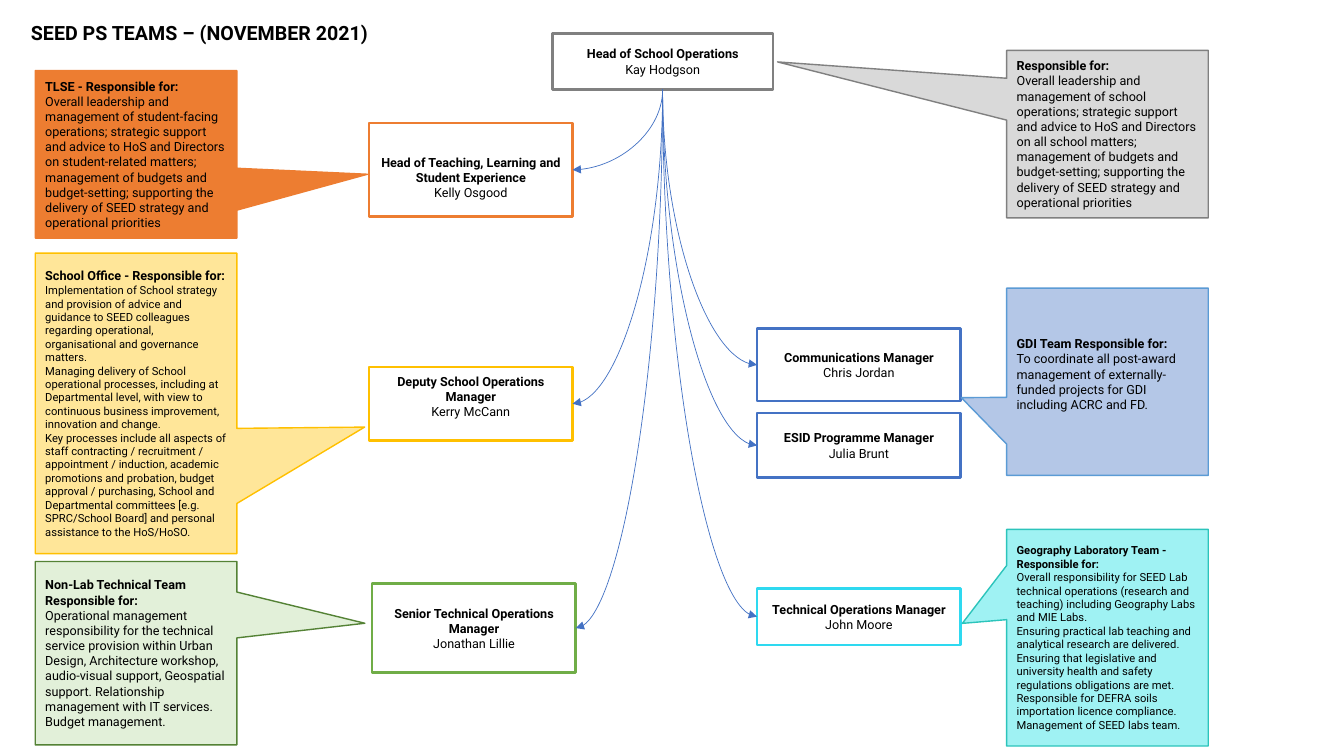
from lxml.etree import SubElement
from pptx import Presentation
from pptx.dml.color import RGBColor
from pptx.enum.shapes import MSO_CONNECTOR, MSO_SHAPE
from pptx.enum.text import MSO_ANCHOR, PP_ALIGN
from pptx.oxml.ns import qn
from pptx.util import Cm, Pt

theme = {
    "font": "Roboto", "title": 14, "body": 9, "small": 8,
    "box": 1.75, "note": 1, "curve": 0.5,
    "black": "000000", "blue": "4472C4", "sky": "5B9BD5", "pale": "B4C7E7",
    "cyan": "2ED9F0", "teal": "2CC4BB", "aqua": "9FF2F3",
    "green": "70AD47", "moss": "548235", "mint": "E2F0D9",
    "gold": "FFC000", "cream": "FFE699", "grey": "808080", "ash": "D9D9D9",
    "orange": "ED7D31",
}


def write(frame, lines, align):
    frame.word_wrap = True
    for i, (text, size, bold) in enumerate(lines):
        para = frame.paragraphs[0] if i == 0 else frame.add_paragraph()
        para.alignment = align
        run = para.add_run()
        run.text = text
        run.font.name = theme["font"]
        run.font.size = Pt(theme[size])
        run.font.bold = bold
        run.font.color.rgb = RGBColor.from_string(theme["black"])


def draw(kind, place, fill, line, width):
    shape = slide.shapes.add_shape(kind, *map(Cm, place))
    shape.shadow.inherit = False
    if fill:
        shape.fill.solid()
        shape.fill.fore_color.rgb = RGBColor.from_string(theme[fill])
    else:
        shape.fill.background()
    shape.line.color.rgb = RGBColor.from_string(theme[line])
    shape.line.width = Pt(theme[width])
    shape.text_frame.vertical_anchor = MSO_ANCHOR.MIDDLE
    return shape


deck = Presentation()
deck.slide_width, deck.slide_height = Cm(33.87), Cm(19.05)
slide = deck.slides.add_slide(deck.slide_layouts[6])

title = slide.shapes.add_textbox(Cm(0.53), Cm(0.41), Cm(10.24), Cm(0.86))
write(title.text_frame, [("SEED PS TEAMS – (NOVEMBER 2021)", "title", True)], PP_ALIGN.LEFT)

left, right, wide = 9.3, 19.08, 5.13
inset, blank = 0.13, 0.51
staff = [
    ("Head of School Operations", "Kay Hodgson", (13.92, 0.84, 5.56, 1.42), "grey", inset, inset),
    ("Head of Teaching, Learning and Student Experience", "Kelly Osgood",
     (left, 3.1, wide, 2.36), "orange", blank, inset),
    ("Deputy School Operations Manager", "Kerry McCann",
     (left, 9.25, wide, 1.85), "gold", inset, blank),
    ("Senior Technical Operations Manager", "Jonathan Lillie",
     (left + 0.08, 14.71, wide, 2.24), "green", inset, inset),
    ("Communications Manager", "Chris Jordan", (right, 8.28, wide, 1.83), "blue", inset, inset),
    ("ESID Programme Manager", "Julia Brunt", (right, 10.41, wide, 1.63), "blue", inset, inset),
    ("Technical Operations Manager", "John Moore",
     (right, 14.83, wide, 1.42), "cyan", inset, inset),
]
boxes = []
for role, name, place, line, top, bottom in staff:
    box = draw(MSO_SHAPE.RECTANGLE, place, None, line, "box")
    box.text_frame.margin_top, box.text_frame.margin_bottom = Cm(top), Cm(bottom)
    write(box.text_frame, [(role, "body", True), (name, "body", False)], PP_ALIGN.CENTER)
    boxes.append(box)

west, east, span = 0.89, 25.37, 5.08
notes = [
    (west, 1.78, 4.22, (1.148, 0.119), "orange", "orange", "body", inset, [
        "TLSE - Responsible for:",
        "Overall leadership and management of student-facing operations; strategic support and "
        "advice to HoS and Directors on student-related matters; management of budgets and "
        "budget-setting; supporting the delivery of SEED strategy and operational priorities"]),
    (west, 6.38, 7.57, (1.134, 0.079), "cream", "gold", "small", inset, [
        "School Office - Responsible for:",
        "Implementation of School strategy and provision of advice and guidance to SEED "
        "colleagues regarding operational, organisational and governance matters.",
        "Managing delivery of School operational processes, including at Departmental level, "
        "with view to continuous business improvement, innovation and change.",
        "Key processes include all aspects of staff contracting / recruitment / appointment / "
        "induction, academic promotions and probation, budget approval / purchasing, School and "
        "Departmental committees [e.g. SPRC/School Board] and personal assistance to the "
        "HoS/HoSO."]),
    (west, 14.15, 4.62, (1.135, -0.163), "mint", "moss", "body", inset, [
        "Non-Lab Technical Team Responsible for:",
        "Operational management responsibility for the technical service provision within Urban "
        "Design, Architecture workshop, audio-visual support, Geospatial support. Relationship "
        "management with IT services.",
        "Budget management."]),
    (east, 1.27, 4.22, (-1.637, -0.431), "ash", "grey", "body", inset, [
        "Responsible for:",
        "Overall leadership and management of school operations; strategic support and advice to "
        "HoS and Directors on all school matters; management of budgets and budget-setting; "
        "supporting the delivery of SEED strategy and operational priorities"]),
    (east, 7.26, 4.72, (-0.725, 0.085), "pale", "sky", "body", blank, [
        "GDI Team Responsible for:",
        "To coordinate all post-award management of externally-funded projects for GDI including "
        "ACRC and FD."]),
    (east, 13.34, 5.46, (-0.72, -0.066), "aqua", "teal", "small", inset, [
        "Geography Laboratory Team - Responsible for:",
        "Overall responsibility for SEED Lab technical operations (research and teaching) "
        "including Geography Labs and MIE Labs.",
        "Ensuring practical lab teaching and analytical research are delivered. Ensuring that "
        "legislative and university health and safety regulations obligations are met. "
        "Responsible for DEFRA soils importation licence compliance. Management of SEED labs "
        "team."]),
]
for x, y, high, tip, fill, line, size, bottom, texts in notes:
    note = draw(MSO_SHAPE.RECTANGULAR_CALLOUT, (x, y, span, high), fill, line, "note")
    note.adjustments[0], note.adjustments[1] = tip
    note.text_frame.margin_bottom = Cm(bottom)
    head = "small" if texts[0].startswith("Geography") else "body"
    lines = [(texts[0], head, True)] + [(text, size, False) for text in texts[1:]]
    write(note.text_frame, lines, PP_ALIGN.LEFT)

chief, *team = boxes
for box in team:
    curve = slide.shapes.add_connector(MSO_CONNECTOR.CURVE, 0, 0, 0, 0)
    curve.begin_connect(box, 3 if box.left < chief.left else 1)
    curve.end_connect(chief, 2)
    curve.line.color.rgb = RGBColor.from_string(theme["blue"])
    curve.line.width = Pt(theme["curve"])
    props = curve._element.spPr
    props.find(qn("a:prstGeom")).set("prst", "curvedConnector2")
    SubElement(props.find(qn("a:ln")), qn("a:headEnd"), type="triangle")
    SubElement(props, qn("a:effectLst"))

deck.save("out.pptx")
